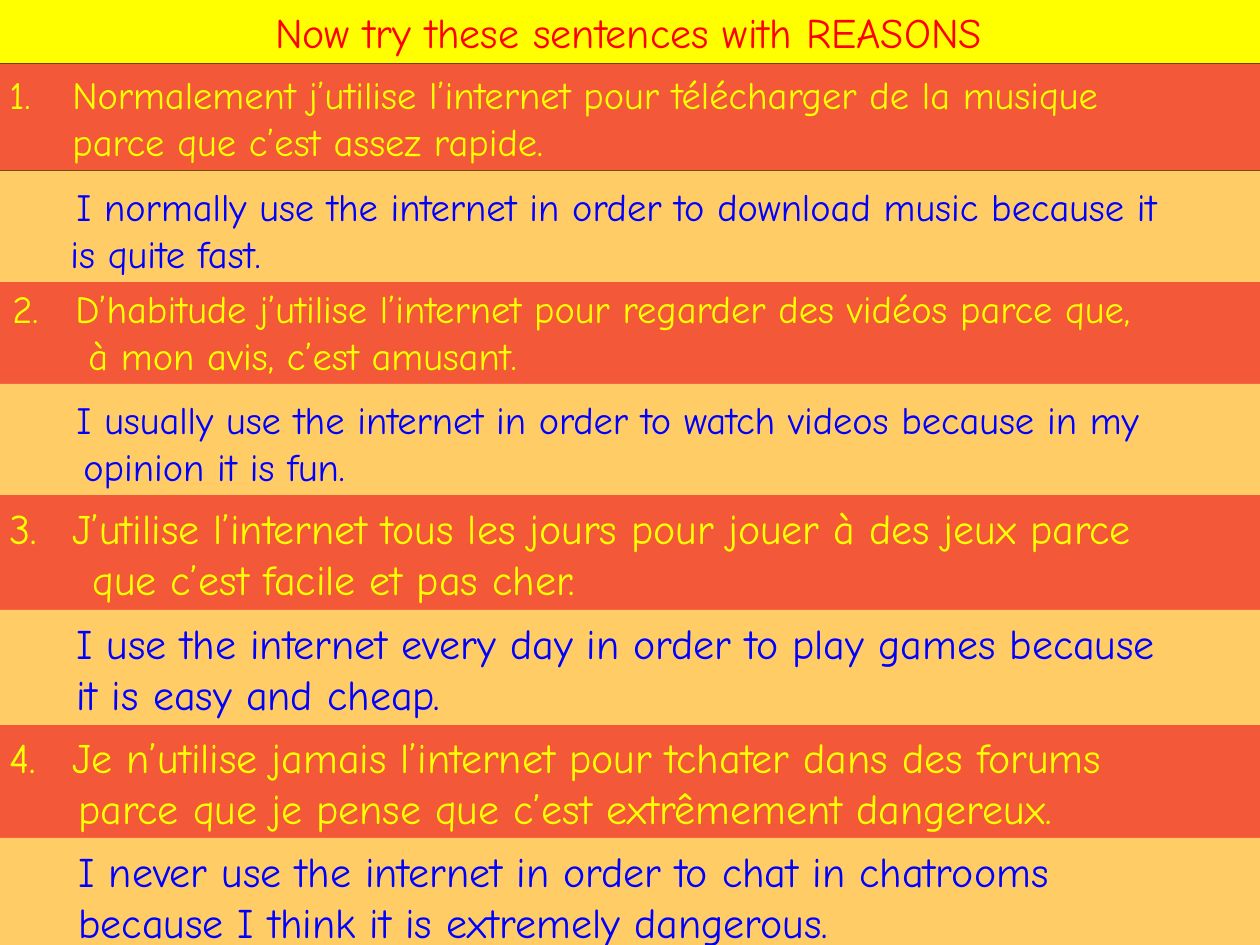
import lxml.etree
import pptx
import pptx.dml.color
import pptx.enum.shapes
import pptx.enum.text
import pptx.oxml.ns
import pptx.util

PX = pptx.util.Inches(1) // 126
FONT = "Comic Neue"
RED = pptx.dml.color.RGBColor(0xFF, 0x00, 0x00)
YELLOW = pptx.dml.color.RGBColor(0xFF, 0xFF, 0x00)
ORANGE = pptx.dml.color.RGBColor(0xF3, 0x58, 0x39)
SAND = pptx.dml.color.RGBColor(0xFF, 0xCC, 0x66)
BLUE = pptx.dml.color.RGBColor(0x00, 0x00, 0xFF)
BROWN = pptx.dml.color.RGBColor(0x62, 0x3A, 0x00)

NUMBER_INDENT = 63
ENGLISH_INDENT = 69

# Each entry: font size, French box, French lines, English box, English lines.
# Each line: text and its left indent.
SENTENCES = [
    (22, (-3, 64, 1266, 106),
     [("Normalement j’utilise l’internet pour télécharger de la musique", NUMBER_INDENT),
      ("parce que c’est assez rapide.", 63)],
     (-5, 171, 1266, 111),
     [("I normally use the internet in order to download music because it", ENGLISH_INDENT),
      ("is quite fast.", 63)]),
    (22, (0, 278, 1260, 106),
     [("D’habitude j’utilise l’internet pour regarder des vidéos parce que,", NUMBER_INDENT),
      ("à mon avis, c’est amusant.", 76)],
     (-5, 384, 1269, 111),
     [("I usually use the internet in order to watch videos because in my", ENGLISH_INDENT),
      ("opinion it is fun.", 76)]),
    (24, (-3, 495, 1266, 115),
     [("J’utilise l’internet tous les jours pour jouer à des jeux parce", NUMBER_INDENT),
      ("que c’est facile et pas cher.", 83)],
     (-5, 610, 1269, 115),
     [("I use the internet every day in order to play games because", ENGLISH_INDENT),
      ("it is easy and cheap.", ENGLISH_INDENT)]),
    (24, (-3, 724, 1263, 115),
     [("Je n’utilise jamais l’internet pour tchater dans des forums", NUMBER_INDENT),
      ("parce que je pense que c’est extrêmement dangereux.", 69)],
     (-3, 838, 1263, 115),
     [("I never use the internet in order to chat in chatrooms", ENGLISH_INDENT),
      ("because I think it is extremely dangerous.", ENGLISH_INDENT)]),
]


def write(paragraph, text, size, color, align=pptx.enum.text.PP_ALIGN.LEFT, indent=0, number=None):
    """Write one formatted line, indented and optionally numbered."""
    paragraph.alignment = align
    run = paragraph.add_run()
    run.text = text
    run.font.name = FONT
    run.font.size = pptx.util.Pt(size)
    run.font.color.rgb = color
    properties = paragraph._p.get_or_add_pPr()
    properties.set("marL", str(indent * PX))
    properties.set("indent", str(-indent * PX if number else 0))
    if number:
        bullet = lxml.etree.SubElement(properties, pptx.oxml.ns.qn("a:buAutoNum"))
        bullet.set("type", "arabicPeriod")
        bullet.set("startAt", str(number))


def add_heading(slide, box):
    """Place the title on its yellow strip."""
    heading = slide.shapes.title
    heading.left, heading.top, heading.width, heading.height = (n * PX for n in box)
    heading.fill.solid()
    heading.fill.fore_color.rgb = YELLOW
    frame = heading.text_frame
    frame.auto_size = pptx.enum.text.MSO_AUTO_SIZE.NONE
    frame.vertical_anchor = pptx.enum.text.MSO_ANCHOR.MIDDLE
    write(frame.paragraphs[0], "Now try these sentences with REASONS", 24, RED,
          align=pptx.enum.text.PP_ALIGN.CENTER)


def add_band(slide, box, lines, size, fill, color, number=None):
    """Place one sentence on a coloured band, numbering its first line if asked."""
    band = slide.shapes.add_shape(pptx.enum.shapes.MSO_SHAPE.RECTANGLE, *(n * PX for n in box))
    band.shadow.inherit = False
    band.fill.solid()
    band.fill.fore_color.rgb = fill
    band.line.fill.background()
    frame = band.text_frame
    frame.word_wrap = True
    frame.vertical_anchor = pptx.enum.text.MSO_ANCHOR.BOTTOM
    (first, first_indent), (second, second_indent) = lines
    write(frame.paragraphs[0], first, size, color, indent=first_indent, number=number)
    write(frame.add_paragraph(), second, size, color, indent=second_indent)


def main():
    """Build the slide and save it."""
    deck = pptx.Presentation()
    deck.slide_width, deck.slide_height = 1260 * PX, 945 * PX
    slide = deck.slides.add_slide(deck.slide_layouts[5])
    slide.background.fill.solid()
    slide.background.fill.fore_color.rgb = BROWN
    add_heading(slide, (-3, 0, 1263, 63))
    for number, (size, box, french, _, _) in enumerate(SENTENCES, 1):
        add_band(slide, box, french, size, ORANGE, YELLOW, number=number)
    for size, _, _, box, english in SENTENCES:
        add_band(slide, box, english, size, SAND, BLUE)
    deck.save("out.pptx")


if __name__ == "__main__":
    main()
